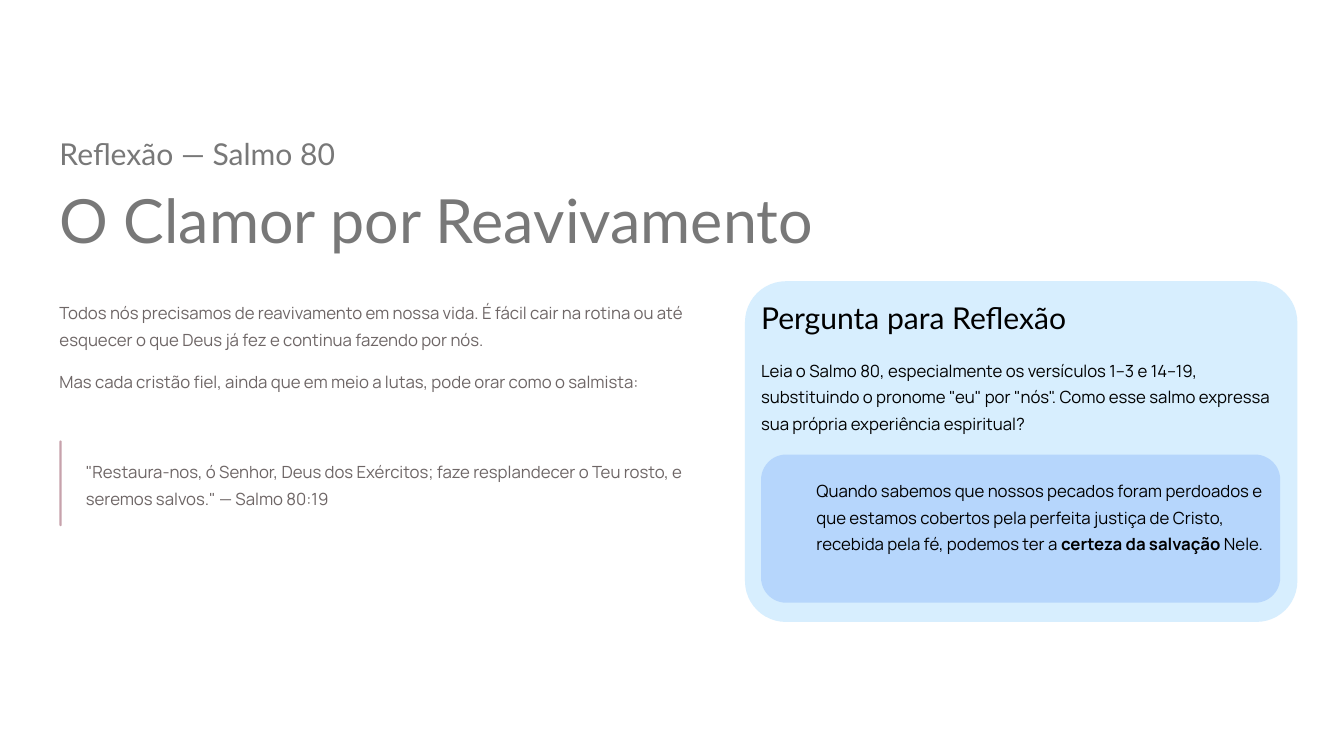
from pptx import Presentation
from pptx.dml.color import RGBColor
from pptx.enum.shapes import MSO_SHAPE
from pptx.enum.text import MSO_ANCHOR, MSO_AUTO_SIZE, PP_ALIGN
from pptx.util import Inches, Pt

ROUNDED = MSO_SHAPE.ROUNDED_RECTANGLE
TOP, LEFT, NO_FIT = MSO_ANCHOR.TOP, PP_ALIGN.LEFT, MSO_AUTO_SIZE.NONE
TITLE_ONLY = 5

WIDTH, HEIGHT = Inches(13.333), Inches(7.5)
COLORS = {
    "page": "FFFFFF",
    "heading": "787878",
    "body": "6E6666",
    "card_text": "000000",
    "quote_bar": "C7A2AC",
    "card": "D7EEFE",
    "panel": "B6D6FC",
}

# Columns and widths, in percent of the slide's width
MARGIN, CARD_LEFT, CARD_COLUMN = 4.43, 55.43, 56.63
CARD_COLUMN_WIDTH = 38.63


def color(name):
    return RGBColor.from_string(COLORS[name])


def share(left, top, width, height):
    """Turn percentages of the slide's size into lengths."""
    return (int(WIDTH * left / 100), int(HEIGHT * top / 100),
            int(WIDTH * width / 100), int(HEIGHT * height / 100))


def prepare_frame(frame, wrap):
    frame.auto_size = NO_FIT
    frame.word_wrap = wrap
    frame.vertical_anchor = TOP
    frame.margin_left = frame.margin_right = 0
    frame.margin_top = frame.margin_bottom = 0


def format_paragraph(paragraph, font, size, ink, spacing):
    paragraph.alignment = LEFT
    paragraph.line_spacing = spacing
    paragraph.font.name = font
    paragraph.font.size = Pt(size)
    paragraph.font.color.rgb = color(ink)


def write_heading(holder, text, size, ink):
    prepare_frame(holder.text_frame, wrap=False)
    holder.text_frame.text = text
    format_paragraph(holder.text_frame.paragraphs[0], "Lato", size, ink, 1.04)


def add_heading(slide, area, text, ink):
    write_heading(slide.shapes.add_textbox(*share(*area)), text, 21.5, ink)


def add_body(slide, area, paragraphs, ink):
    """Each paragraph is a list of (text, bold) pieces."""
    frame = slide.shapes.add_textbox(*share(*area)).text_frame
    prepare_frame(frame, wrap=True)
    for index, pieces in enumerate(paragraphs):
        paragraph = frame.add_paragraph() if index else frame.paragraphs[0]
        for text, bold in pieces:
            run = paragraph.add_run()
            run.text = text
            if bold:
                run.font.bold = True
        format_paragraph(paragraph, "Manrope", 12, ink, 1.33)
        if len(paragraphs) > 1:
            paragraph.space_after = Pt(10.5)


def add_panel(slide, area, fill, rounding):
    panel = slide.shapes.add_shape(ROUNDED, *share(*area))
    panel.adjustments[0] = rounding
    panel.shadow.inherit = False
    panel.fill.solid()
    panel.fill.fore_color.rgb = color(fill)
    panel.line.fill.background()


def add_headings(slide):
    add_heading(slide, (MARGIN, 17.73, 27.75, 5.07), "Reflexão — Salmo 80", "heading")
    title = slide.shapes.title
    title.left, title.top, title.width, title.height = share(MARGIN, 23.73, 62.6, 10.13)
    write_heading(title, "O Clamor por Reavivamento", 43.5, "heading")


def add_reflection(slide):
    add_body(slide, (MARGIN, 39.2, 48.75, 16.4), [
        [("Todos nós precisamos de reavivamento em nossa vida. É fácil cair na rotina "
          "ou até esquecer o que Deus já fez e continua fazendo por nós.", False)],
        [("Mas cada cristão fiel, ainda que em meio a lutas, pode orar como o salmista:",
          False)],
    ], "body")
    # Quotation with its side bar
    add_panel(slide, (MARGIN, 58.27, 0.16, 11.33), "quote_bar", 0.5)
    add_body(slide, (6.38, 60.27, 46.8, 7.2), [
        [('"Restaura-nos, ó Senhor, Deus dos Exércitos; faze resplandecer o Teu rosto, '
          'e seremos salvos." — Salmo 80:19', False)],
    ], "body")


def add_question_card(slide):
    add_panel(slide, (CARD_LEFT, 37.2, 41.1, 45.07), "card", 0.12)
    add_heading(slide, (CARD_COLUMN, 39.47, 28.6, 5.07), "Pergunta para Reflexão",
                "card_text")
    add_body(slide, (CARD_COLUMN, 46.8, CARD_COLUMN_WIDTH, 10.8), [
        [('Leia o Salmo 80, especialmente os versículos 1–3 e 14–19, substituindo o '
          'pronome "eu" por "nós". Como esse salmo expressa sua própria experiência '
          'espiritual?', False)],
    ], "card_text")
    # Closing assurance inside the card
    add_panel(slide, (CARD_COLUMN, 60.13, CARD_COLUMN_WIDTH, 19.6), "panel", 0.17)
    add_body(slide, (60.75, 62.67, 33.23, 14.4), [
        [("Quando sabemos que nossos pecados foram perdoados e que estamos cobertos pela "
          "perfeita justiça de Cristo, recebida pela fé, podemos ter a ", False),
         ("certeza da salvação", True),
         (" Nele.", False)],
    ], "card_text")


def main():
    deck = Presentation()
    deck.slide_width, deck.slide_height = WIDTH, HEIGHT
    slide = deck.slides.add_slide(deck.slide_layouts[TITLE_ONLY])
    slide.background.fill.solid()
    slide.background.fill.fore_color.rgb = color("page")
    add_headings(slide)
    add_reflection(slide)
    add_question_card(slide)
    deck.save("out.pptx")


if __name__ == "__main__":
    main()
